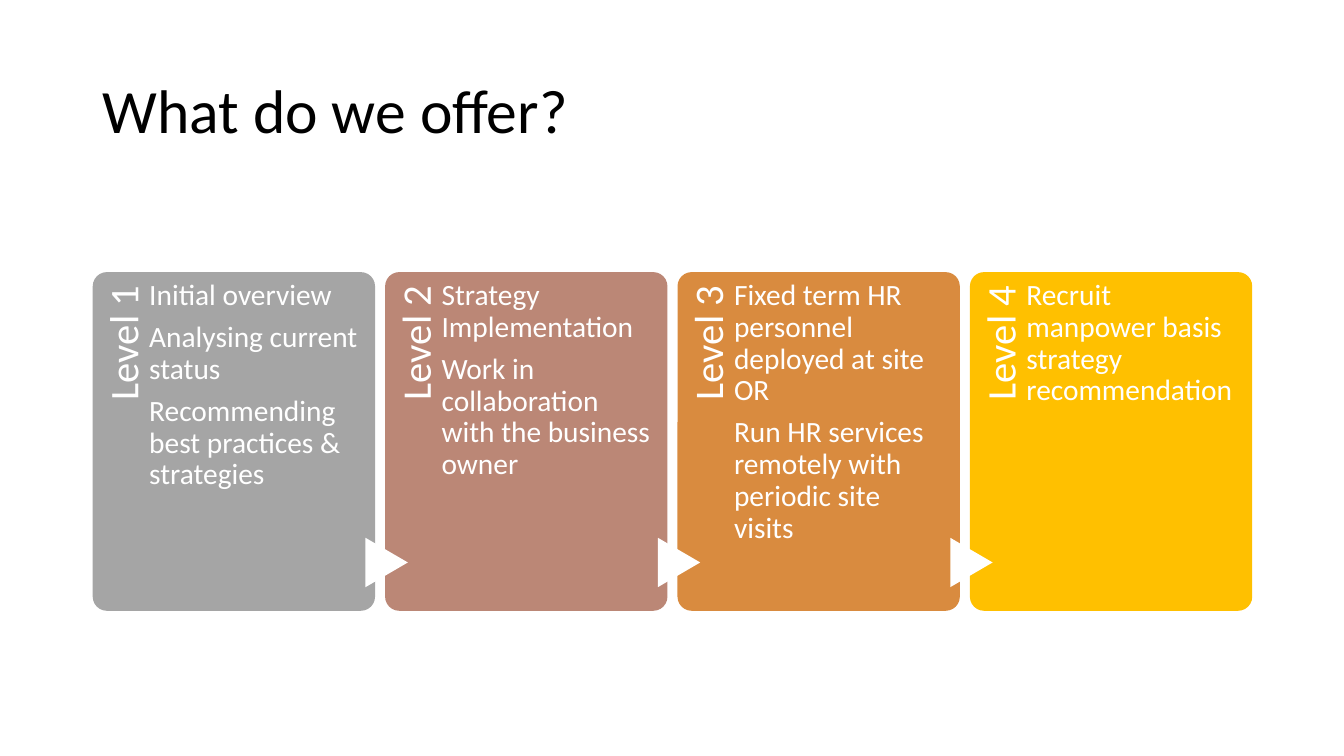
from dataclasses import dataclass

from pptx import Presentation
from pptx import util as u
from pptx.dml.color import RGBColor
from pptx.enum import shapes, text


@dataclass(frozen=True)
class Theme:
    font: str = "Calibri"
    dark: str = "000000"
    light: str = "FFFFFF"
    levels: tuple = ("A5A5A5", "BB8776", "D98B3F", "FFC000")
    title_size: int = 44
    label_size: int = 29
    body_size: int = 21
    line_spacing: float = 0.9
    space_after: float = 0.35  # share of the type size


LEVELS = [
    ["Initial overview", "Analysing current status",
     "Recommending best practices & strategies"],
    ["Strategy Implementation",
     "Work in collaboration with the business owner"],
    ["Fixed term HR personnel deployed at site OR",
     "Run HR services remotely with periodic site visits"],
    ["Recruit manpower basis strategy recommendation"],
]

CARD_LEFT, CARD_TOP, CARD_WIDTH, CARD_HEIGHT = 0.92, 2.7, 2.8, 3.36
CARD_PITCH = 2.9


def write_text(frame, paragraphs, *, theme, size, color,
               align=text.PP_ALIGN.LEFT, anchor=text.MSO_ANCHOR.TOP,
               insets=(0, 0, 0, 0)):
    """Fill a text frame; insets run left, top, right, bottom in inches."""
    frame.word_wrap = True
    frame.vertical_anchor = anchor
    (frame.margin_left, frame.margin_top,
     frame.margin_right, frame.margin_bottom) = map(u.Inches, insets)
    for index, line in enumerate(paragraphs):
        paragraph = frame.add_paragraph() if index else frame.paragraphs[0]
        paragraph.alignment = align
        paragraph.line_spacing = theme.line_spacing
        paragraph.space_after = u.Pt(size * theme.space_after)
        run = paragraph.add_run()
        run.text = line
        run.font.name = theme.font
        run.font.size = u.Pt(size)
        run.font.color.rgb = RGBColor.from_string(color)


class SlideBuilder:
    def __init__(self, slide, theme):
        self.slide = slide
        self.theme = theme

    def add_text(self, box, paragraphs, rotation=0, **text_format):
        shape = self.slide.shapes.add_textbox(*map(u.Inches, box))
        shape.rotation = rotation
        write_text(shape.text_frame, paragraphs, theme=self.theme,
                   **text_format)

    def add_shape(self, kind, box, color, rotation=0):
        shape = self.slide.shapes.add_shape(kind, *map(u.Inches, box))
        shape.shadow.inherit = False
        shape.fill.solid()
        shape.fill.fore_color.rgb = RGBColor.from_string(color)
        shape.line.fill.background()
        shape.rotation = rotation
        return shape

    def add_title(self, title):
        self.add_text((0.92, 0.4, 11.5, 1.45), [title],
                      size=self.theme.title_size, color=self.theme.dark,
                      anchor=text.MSO_ANCHOR.MIDDLE,
                      insets=(0.1, 0.05, 0.1, 0.05))

    def add_level(self, index, paragraphs):
        theme = self.theme
        left = CARD_LEFT + index * CARD_PITCH

        # Card
        card = self.add_shape(shapes.MSO_SHAPE.ROUNDED_RECTANGLE,
                              (left, CARD_TOP, CARD_WIDTH, CARD_HEIGHT),
                              theme.levels[index])
        card.adjustments[0] = 0.05

        # Label reading upwards along the left edge
        self.add_text((left - 1.1, 3.79, 2.75, 0.56), [f"Level {index + 1}"],
                      rotation=270, size=theme.label_size, color=theme.light,
                      align=text.PP_ALIGN.RIGHT, insets=(0, 0.11, 0.14, 0))

        # Arrow from the previous card
        if index:
            self.add_shape(shapes.MSO_SHAPE.FLOWCHART_EXTRACT,
                           (left - 0.23, 5.37, 0.49, 0.42), theme.light,
                           rotation=90)

        # Description
        self.add_text((left + 0.56, CARD_TOP, 2.09, CARD_HEIGHT), paragraphs,
                      size=theme.body_size, color=theme.light,
                      insets=(0, 0.08, 0, 0))


def main():
    presentation = Presentation()
    presentation.slide_width = u.Inches(13.33)
    presentation.slide_height = u.Inches(7.5)
    slide = presentation.slides.add_slide(presentation.slide_layouts[6])

    builder = SlideBuilder(slide, Theme())
    builder.add_title("What do we offer?")
    for index, paragraphs in enumerate(LEVELS):
        builder.add_level(index, paragraphs)

    presentation.save("out.pptx")


if __name__ == "__main__":
    main()
